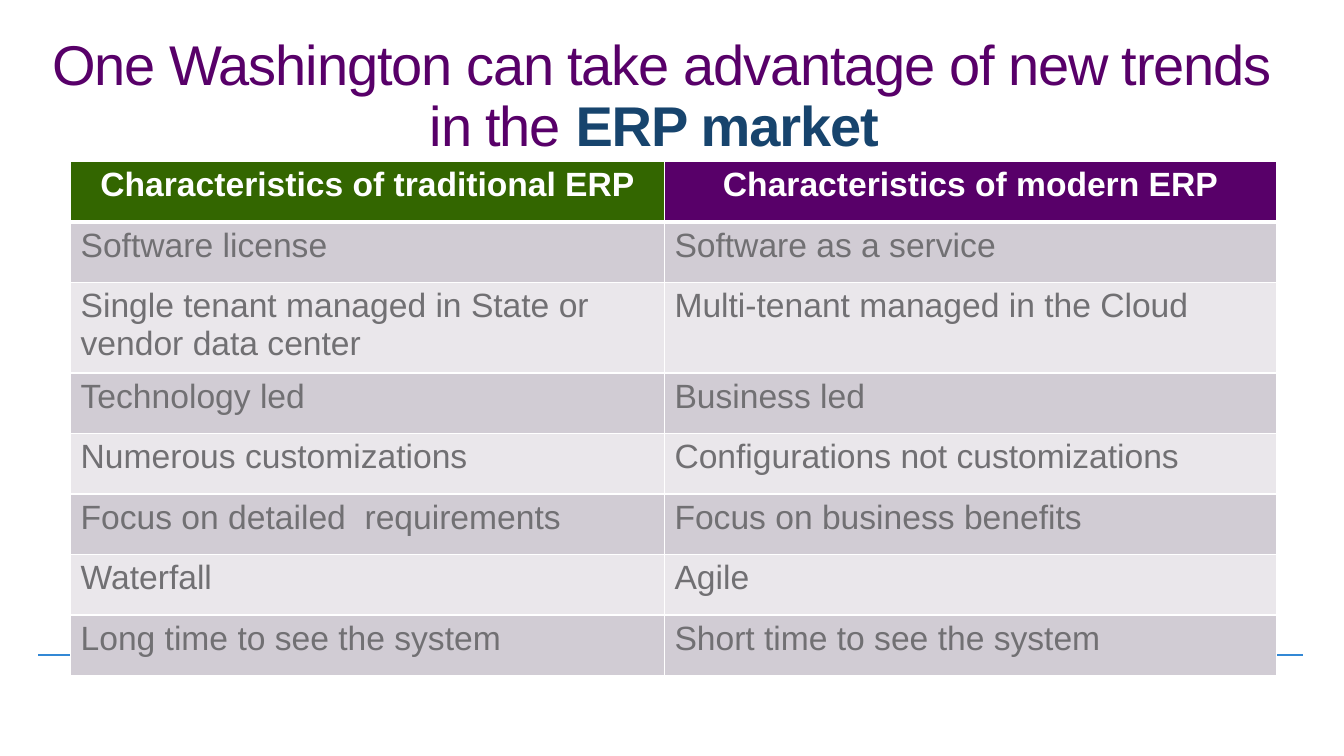
from dataclasses import dataclass

from pptx import Presentation
from pptx.dml.color import RGBColor as RGB
from pptx.enum.shapes import MSO_CONNECTOR as Conn
from pptx.enum.text import MSO_ANCHOR as Anchor, PP_ALIGN as Align
from pptx.oxml.ns import qn
from pptx.util import Inches, Pt
from lxml.etree import SubElement as Sub


@dataclass(frozen=True)
class Theme:
    font: str = "Arial"
    title: int = 40
    body: int = 24
    purple: str = "580069"
    navy: str = "17446D"
    green: str = "336600"
    blue: str = "3388D5"
    gray: str = "717073"
    white: str = "FFFFFF"
    bands: tuple = ("D1CCD4", "EAE7EB")


HEADS = ("Characteristics of traditional ERP", "Characteristics of modern ERP")
TRAITS = (
    ("Software license", "Software as a service"),
    ("Single tenant managed in State or vendor data center",
     "Multi-tenant managed in the Cloud"),
    ("Technology led", "Business led"),
    ("Numerous customizations", "Configurations not customizations"),
    ("Focus on detailed  requirements", "Focus on business benefits"),
    ("Waterfall", "Agile"),
    ("Long time to see the system", "Short time to see the system"),
)


class Deck:
    def __init__(self, theme):
        self.theme = theme
        self.prs = Presentation()
        self.prs.slide_width = Inches(13.33)
        self.prs.slide_height = Inches(7.5)
        self.slide = self.prs.slides.add_slide(self.prs.slide_layouts[6])

    def style(self, run, size, color, bold=False):
        font = run.font
        font.name, font.size, font.bold = self.theme.font, Pt(size), bold
        font.color.rgb = RGB.from_string(color)

    def rule(self, left, right, y):
        line = self.slide.shapes.add_connector(
            Conn.STRAIGHT, Inches(left), Inches(y), Inches(right), Inches(y))
        line.line.color.rgb = RGB.from_string(self.theme.blue)
        line.line.width = Pt(1.5)
        Sub(line._element.spPr, qn("a:effectLst"))

    def title(self, parts, left, top, width, height):
        """Add a centred heading from (text, colour, bold) parts."""
        box = self.slide.shapes.add_textbox(
            Inches(left), Inches(top), Inches(width), Inches(height))
        frame = box.text_frame
        frame.word_wrap = True
        frame.vertical_anchor = Anchor.TOP
        frame.margin_top = Inches(0.1)
        para = frame.paragraphs[0]
        para.alignment = Align.CENTER
        para.line_spacing = 0.9
        for text, color, bold in parts:
            run = para.add_run()
            run.text = text
            self.style(run, self.theme.title, color, bold)
            run.font._element.set("spc", "-80")

    def edge(self, cell, widths):
        """Draw white borders; widths are points for left, right, top, bottom."""
        props = cell._tc.get_or_add_tcPr()
        for spot, (side, width) in enumerate(zip("LRTB", widths)):
            line = props.makeelement(qn(f"a:ln{side}"), {"w": str(Pt(width))})
            fill = Sub(line, qn("a:solidFill"))
            Sub(fill, qn("a:srgbClr"), val=self.theme.white)
            props.insert(spot, line)

    def cell(self, cell, text, fill, head):
        theme = self.theme
        cell.fill.solid()
        cell.fill.fore_color.rgb = RGB.from_string(fill)
        cell.text_frame.text = text
        para = cell.text_frame.paragraphs[0]
        para.alignment = Align.CENTER if head else Align.LEFT
        color = theme.white if head else theme.gray
        self.style(para.runs[0], theme.body, color, head)

    def table(self, heads, rows, left, top, cols, high):
        theme = self.theme
        count = len(rows) + 1
        grid = self.slide.shapes.add_table(
            count, len(cols), Inches(left), Inches(top),
            Inches(sum(cols)), Inches(high * count)).table
        for col, width in zip(grid.columns, cols):
            col.width = Inches(width)
        for r, texts in enumerate((heads, *rows)):
            grid.rows[r].height = Inches(high)
            fills = (theme.bands[(r - 1) % 2],) * 2 if r else (theme.green, theme.purple)
            for c, (text, fill) in enumerate(zip(texts, fills)):
                cell = grid.cell(r, c)
                self.cell(cell, text, fill, r == 0)
                self.edge(cell, (1, 1, 3 if r == 1 else 1, 3 if r == 0 else 1))


def main():
    theme = Theme()
    deck = Deck(theme)
    deck.rule(0.38, 12.92, 6.5)
    deck.title(
        (("One Washington can take advantage of new trends in the ", theme.purple, False),
         ("ERP market ", theme.navy, True)),
        0.22, 0.27, 12.68, 1.48)
    deck.table(HEADS, TRAITS, 0.7, 1.6, (5.89, 6.07), 0.6)
    deck.prs.save("out.pptx")


if __name__ == "__main__":
    main()
